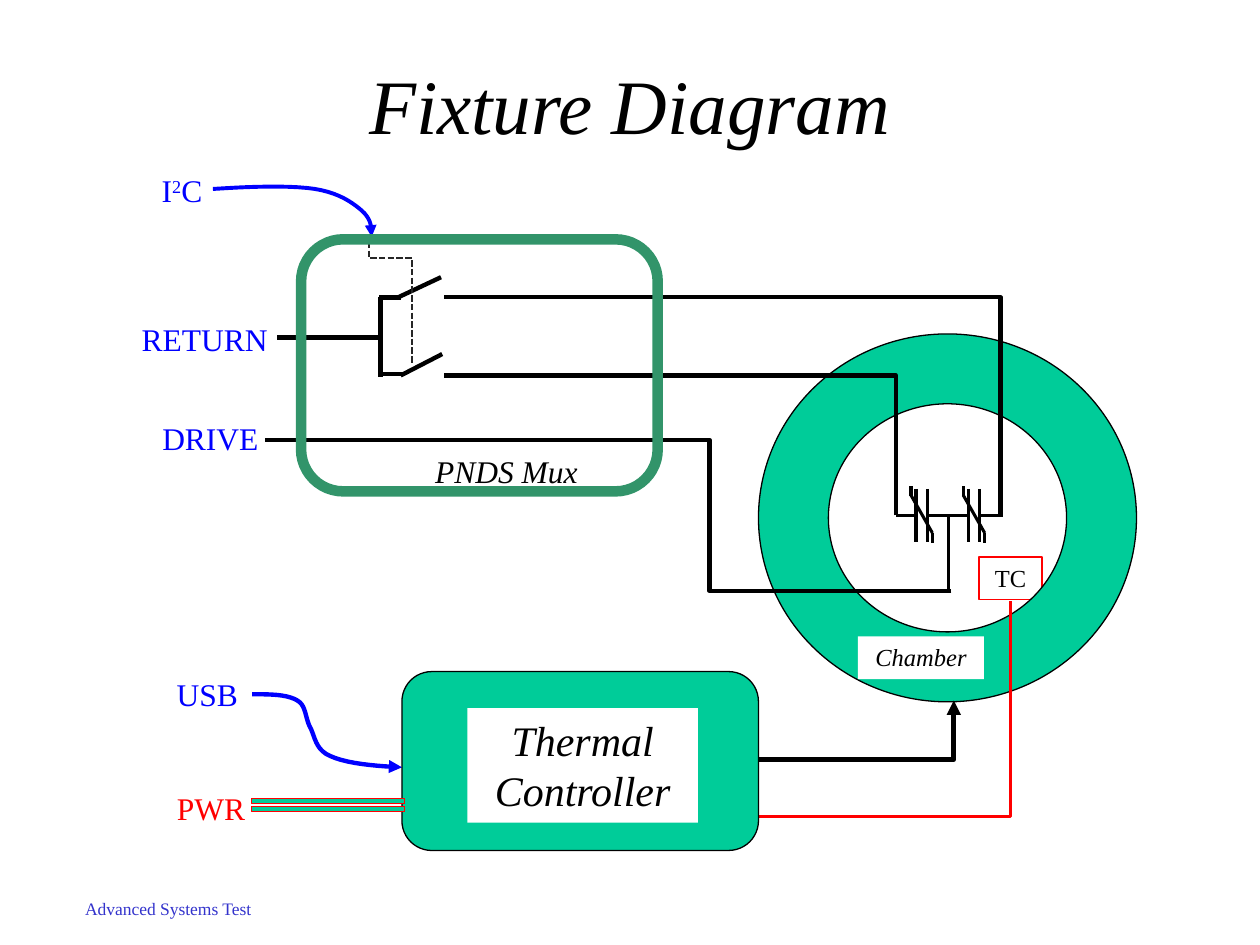
"""Build the fixture diagram slide on a grid of 100 columns by 75 rows."""
from dataclasses import dataclass
from lxml.etree import SubElement
from pptx import Presentation
from pptx.dml.color import RGBColor as RGB
from pptx.enum.dml import MSO_LINE as DASH
from pptx.enum.shapes import MSO_CONNECTOR as LINK, MSO_SHAPE as SHAPE
from pptx.enum.text import MSO_ANCHOR as ANCHOR, MSO_AUTO_SIZE as AUTO, PP_ALIGN as ALIGN
from pptx.oxml.ns import qn
from pptx.util import Inches, Pt


@dataclass(frozen=True)
class Theme:
    font: str = "Times New Roman"
    ink: str = "000000"
    paper: str = "FFFFFF"
    signal: str = "0000FF"
    power: str = "FF0000"
    body: str = "00CC99"
    mux: str = "32946A"
    control: str = "262626"
    footer: str = "3333CC"
    title_size: int = 44
    block_size: int = 24
    label_size: int = 18
    tag_size: int = 14
    footer_size: int = 10
    thin: float = 0.75
    lead: float = 1.75
    wire: float = 2.5


T = Theme()
prs = Presentation()
prs.slide_width, prs.slide_height = Inches(10), Inches(7.5)
COL, ROW = prs.slide_width / 100, prs.slide_height / 75
s = prs.slides.add_slide(prs.slide_layouts[6])


def outline(sp, color, width, arrow=False, dash=None):
    sp.line.color.rgb = RGB.from_string(color)
    sp.line.width = Pt(width)
    if dash:
        sp.line.dash_style = dash
    ln = sp.line._get_or_add_ln()
    SubElement(ln, qn("a:round"))
    if arrow:
        SubElement(ln, qn("a:tailEnd"), type="triangle")


def place(text, x, y, w, h, size=T.label_size, color=T.ink, italic=False,
          shape=None, fill=None, line=None, width=T.thin, fit=True):
    box = int(x * COL), int(y * ROW), int(w * COL), int(h * ROW)
    if shape is None:
        sp = s.shapes.add_textbox(*box)
    else:
        sp = s.shapes.add_shape(shape, *box)
        sp.shadow.inherit = False
        sp.fill.background()
        sp.line.fill.background()
    if fill:
        sp.fill.solid()
        sp.fill.fore_color.rgb = RGB.from_string(fill)
    if line:
        outline(sp, line, width)
    if not text:
        return sp
    tf = sp.text_frame
    tf.word_wrap = True
    tf.margin_left = tf.margin_right = 0
    tf.auto_size = AUTO.SHAPE_TO_FIT_TEXT if fit else AUTO.NONE
    tf.vertical_anchor = ANCHOR.TOP if fit else ANCHOR.MIDDLE
    for i, row in enumerate(text.split("\n")):
        p = tf.add_paragraph() if i else tf.paragraphs[0]
        p.alignment = ALIGN.CENTER
        for j, part in enumerate(row.split("^")):
            r = p.add_run()
            r.text = part
            r.font.name, r.font.size, r.font.italic = T.font, Pt(size), italic
            r.font.color.rgb = RGB.from_string(color)
            if j % 2:
                r.font._element.set("baseline", "30000")
    return sp


place("Advanced Systems Test", 5, 70.8, 16.7, 2.7, size=T.footer_size, color=T.footer)
place("Fixture Diagram", 7.5, 4.5, 85, 7.5, size=T.title_size, italic=True, fit=False)
place("TC", 77.7, 44.2, 5, 3.4, size=T.tag_size, shape=SHAPE.RECTANGLE, line=T.power)
chamber = place("", 60.2, 26.5, 30, 29.2, shape=SHAPE.DONUT, fill=T.body, line=T.ink)
chamber.adjustments[0] = 0.19

capacitor = [
    (72.7, 38.8, 72.7, 43), (73.6, 38.8, 73.6, 43),
    (71.1, 40.9, 72.7, 40.9), (73.6, 40.9, 75.25, 40.9),
    (72.3, 39.3, 74, 42.3), (74, 42.3, 74, 43.1), (72.3, 38.6, 72.3, 39.4),
]
lines = [(x1 + dx, y1, x2 + dx, y2, T.lead) for dx in (0, 4.15) for x1, y1, x2, y2 in capacitor]
lines += [
    (75.3, 46.8, 75.3, 40.9, T.lead),
    (79.4, 41, 79.4, 35.2, T.wire),
    (71.1, 40.9, 71.1, 35.1, T.wire),
    (30.2, 23.6, 30.2, 29.9, T.wire),
    (30.1, 23.6, 31.8, 23.6, T.wire),
    (30.2, 29.7, 31.9, 29.7, T.wire),
    (31.8, 29.8, 35.1, 28.1, T.wire),
    (31.6, 23.6, 35, 22, T.wire),
    (30.3, 26.8, 22, 26.8, T.wire),
]
for x1, y1, x2, y2, width in lines:
    sp = s.shapes.add_connector(LINK.STRAIGHT, int(x1 * COL), int(y1 * ROW),
                                int(x2 * COL), int(y2 * ROW))
    outline(sp, T.ink, width)
    SubElement(sp._element.spPr, qn("a:effectLst"))

wires = [
    ([(53, 60.3), (75.7, 60.3), (75.7, 55.6)], T.ink, 2.75, True, None),
    ([(80.2, 47.7), (80.2, 64.8), (56.9, 64.8)], T.power, 1.25, True, None),
    ([(75.5, 46.9), (56.3, 46.9), (56.3, 34.9), (21, 34.9)], T.ink, T.wire, False, None),
    ([(79.4, 35.3), (79.4, 23.6), (35.2, 23.6)], T.ink, T.wire, False, None),
    ([(71.1, 36.8), (71.1, 29.8), (35.2, 29.8)], T.ink, T.wire, False, None),
    ([(29.3, 19.2), (29.3, 20.5), (32.7, 20.5), (32.7, 28.9)], T.control, 1.25, False,
     DASH.SQUARE_DOT),
]
curves = [
    ([(20, 55.1), (21.4, 55.1), (22.8, 55.1), (23.6, 55.6), (24.3, 56), (24.2, 56.9),
      (24.6, 57.7), (25, 58.4), (25, 59.5), (26.2, 60), (27.5, 60.6), (29.7, 60.8),
      (31.9, 60.9)], T.wire),
    ([(16.9, 15), (20, 14.8), (23, 14.7), (25, 15), (26.9, 15.3), (28, 16.1),
      (28.7, 16.7), (29.5, 17.4), (29.5, 18.1), (29.5, 18.8)], 2.25),
]
STEPS = 10
for knots, width in curves:
    points = knots[:1]
    for i in range(0, len(knots) - 1, 3):
        for t in (n / STEPS for n in range(1, STEPS + 1)):
            weights = (1 - t) ** 3, 3 * t * (1 - t) ** 2, 3 * t * t * (1 - t), t ** 3
            points.append(tuple(sum(w * k[axis] for w, k in zip(weights, knots[i:i + 4]))
                                for axis in (0, 1)))
    wires.append((points, T.signal, width, True, None))

for points, color, width, arrow, dash in wires:
    start, *rest = [(int(x * COL), int(y * ROW)) for x, y in points]
    builder = s.shapes.build_freeform(*start)
    builder.add_line_segments(rest, close=False)
    sp = builder.convert_to_shape()
    sp.shadow.inherit = False
    sp.fill.background()
    outline(sp, color, width, arrow, dash)

place("", 31.9, 53.3, 28.3, 14.2, shape=SHAPE.ROUNDED_RECTANGLE, fill=T.body, line=T.ink)
place("Thermal\nController", 37.1, 56.2, 18.3, 9.1, size=T.block_size, italic=True,
      shape=SHAPE.RECTANGLE, fill=T.paper)
place("PNDS Mux", 33.1, 35.4, 14.2, 4, italic=True)
for text, x, y, w, color in [
    ("USB", 12.7, 53.1, 7.5, T.signal),
    ("I^2^C", 11.1, 13.1, 6.7, T.signal),
    ("DRIVE", 11.7, 32.8, 10, T.signal),
    ("RETURN", 9.6, 24.9, 13.3, T.signal),
    ("PWR", 13, 62.1, 7.5, T.power),
]:
    place(text, x, y, w, 4, color=color)
place("", 23.9, 19, 28.3, 20, shape=SHAPE.ROUNDED_RECTANGLE, line=T.mux, width=6)
place("", 17.8, 63, 16.5, 1.8, shape=SHAPE.MATH_EQUAL, fill=T.body, line=T.power)
place("Chamber", 68.1, 50.5, 10, 3.4, size=T.tag_size, italic=True,
      shape=SHAPE.RECTANGLE, fill=T.paper)

prs.save("out.pptx")
